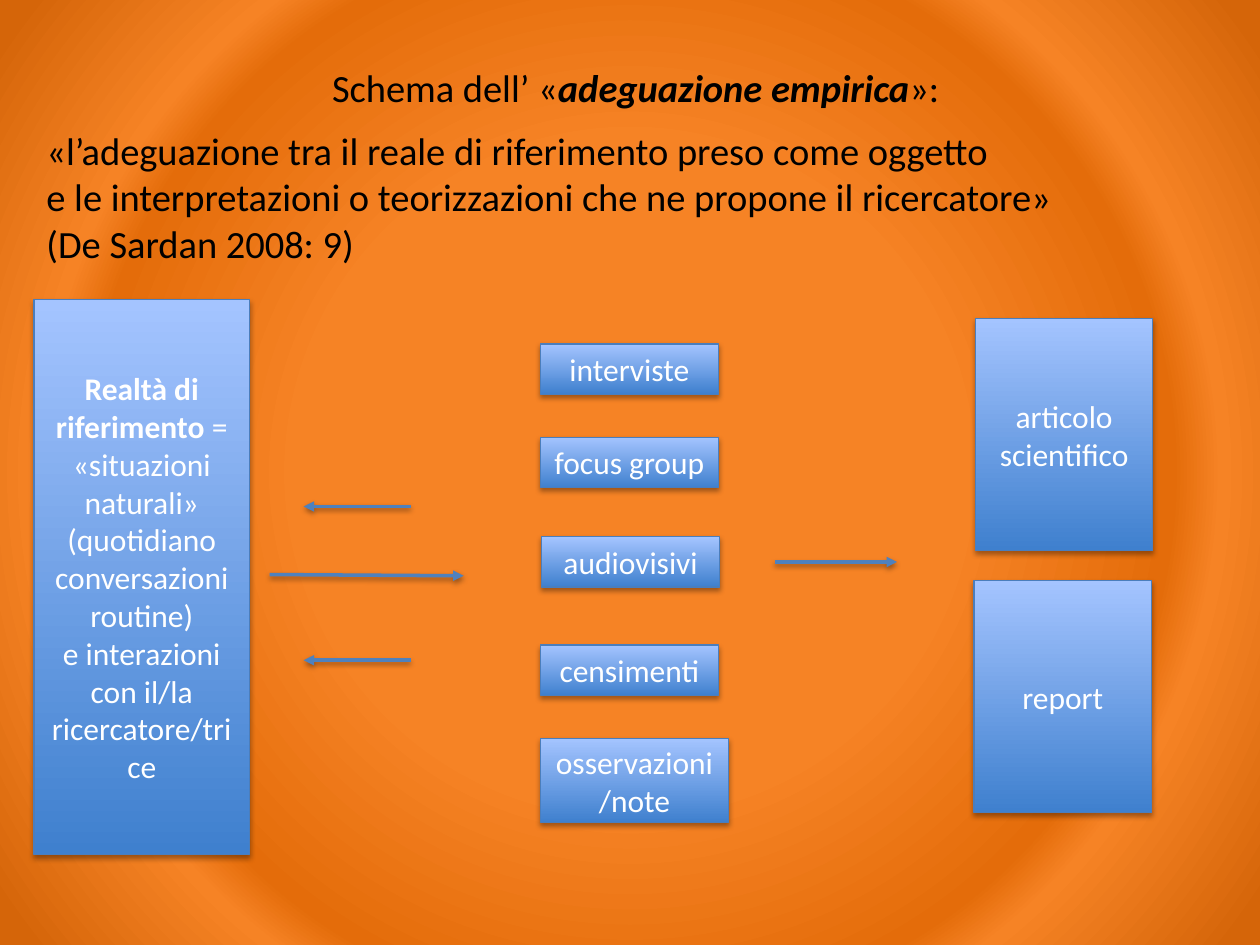
"""Build the slide on the scheme of empirical adequacy."""
from lxml.etree import SubElement as Sub
from pptx import Presentation
from pptx.dml.color import RGBColor
from pptx.enum.shapes import MSO_CONNECTOR as Conn, MSO_SHAPE as Shape
from pptx.enum.text import MSO_ANCHOR as Anchor, PP_ALIGN as Align
from pptx.oxml.ns import qn
from pptx.util import Inches, Pt

BLACK = RGBColor(0x00, 0x00, 0x00)
WHITE = RGBColor(0xFF, 0xFF, 0xFF)
DEEP = RGBColor(0x3F, 0x80, 0xCE)
PALE = RGBColor(0xA4, 0xC4, 0xFF)
EDGE = RGBColor(0x4B, 0x7E, 0xBC)
BLUE = RGBColor(0x4F, 0x81, 0xBD)
GLOW = RGBColor(0xF6, 0x83, 0x25)
RING = RGBColor(0xE4, 0x6C, 0x0A)
RIM = RGBColor(0xD5, 0x65, 0x09)


def shade(item, dist, alpha):
    props = item._element.spPr
    for old in props.findall(qn("a:effectLst")):
        props.remove(old)
    glow = Sub(Sub(props, qn("a:effectLst")), qn("a:outerShdw"),
               blurRad=str(Pt(3.1)), dist=str(Pt(dist)), dir="5400000", rotWithShape="0")
    tone = Sub(glow, qn("a:srgbClr"), val=str(BLACK))
    Sub(tone, qn("a:alpha"), val=str(alpha * 1000))


def write(frame, lines, size, color, align):
    frame.word_wrap = True
    for i, line in enumerate(lines):
        para = frame.paragraphs[0] if i == 0 else frame.add_paragraph()
        para.alignment = align
        for text, bold, slant in line:
            run = para.add_run()
            run.text = text
            font = run.font
            font.name, font.size, font.bold, font.italic = "Calibri", Pt(size), bold, slant
            font.color.rgb = color


deck = Presentation()
deck.slide_width, deck.slide_height = Inches(10), Inches(7.5)
slide = deck.slides.add_slide(deck.slide_layouts[6])

slide.background.fill.gradient()
grad = next(slide.element.iter(qn("a:gradFill")))
for child in list(grad):
    grad.remove(child)
stops = Sub(grad, qn("a:gsLst"))
for place, color in [(42, GLOW), (69, RING), (75, GLOW), (97, RIM)]:
    stop = Sub(stops, qn("a:gs"), pos=str(place * 1000))
    Sub(stop, qn("a:srgbClr"), val=str(color))
Sub(Sub(grad, qn("a:path"), path="circle"), qn("a:fillToRect"),
    l="50000", t="50000", r="50000", b="50000")

real = [
    [("Realtà di riferimento ", True, False), ("=", False, False)],
    [("«situazioni naturali» (quotidiano conversazioni", False, False)],
    [("routine)", False, False)],
    [("e interazioni con il/la ricercatore/trice", False, False)],
]
boxes = [(0.27, 2.38, 1.71, 4.4, real)]
for x, y, w, h, text in [
    (7.73, 4.61, 1.41, 1.84, "report"),
    (7.74, 2.53, 1.41, 1.84, "articolo scientifico"),
    (4.29, 2.73, 1.41, 0.4, "interviste"),
    (4.29, 3.47, 1.41, 0.4, "focus group "),
    (4.3, 4.26, 1.41, 0.4, "audiovisivi"),
    (4.29, 5.12, 1.41, 0.4, "censimenti"),
    (4.29, 5.86, 1.49, 0.67, "osservazioni/note"),
]:
    boxes.append((x, y, w, h, [[(text, False, False)]]))

for x, y, w, h, lines in boxes:
    box = slide.shapes.add_shape(Shape.RECTANGLE, Inches(x), Inches(y), Inches(w), Inches(h))
    box.fill.gradient()
    box.fill.gradient_angle = 90
    for stop, color in zip(box.fill.gradient_stops, (DEEP, PALE)):
        stop.color.rgb = color
    box.line.color.rgb = EDGE
    box.line.width = Pt(0.75)
    shade(box, 1.8, 35)
    box.text_frame.vertical_anchor = Anchor.MIDDLE
    write(box.text_frame, lines, 18, WHITE, Align.CENTER)

for x1, y1, x2, y2 in [
    (6.15, 4.46, 7.12, 4.46),
    (2.14, 4.56, 3.68, 4.57),
    (3.26, 4.02, 2.41, 4.02),
    (3.26, 5.24, 2.41, 5.24),
]:
    arrow = slide.shapes.add_connector(
        Conn.STRAIGHT, Inches(x1), Inches(y1), Inches(x2), Inches(y2))
    arrow.line.color.rgb = BLUE
    arrow.line.width = Pt(2)
    Sub(arrow.line._get_or_add_ln(), qn("a:tailEnd"), type="triangle")
    shade(arrow, 1.6, 38)

title = [[("Schema dell’ «", False, False), ("adeguazione empirica", True, True),
          ("»: ", False, False)]]
quote = [[(text, False, False)] for text in (
    "«l’adeguazione tra il reale di riferimento preso come oggetto",
    "e le interpretazioni o teorizzazioni che ne propone il ricercatore»",
    "(De Sardan 2008: 9)",
)]
for x, y, w, h, lines, align in [
    (1.58, 0.46, 7, 1.92, title, Align.CENTER),
    (0.27, 0.96, 11.18, 1.88, quote, Align.LEFT),
]:
    area = slide.shapes.add_textbox(Inches(x), Inches(y), Inches(w), Inches(h))
    write(area.text_frame, lines, 22, BLACK, align)

deck.save("out.pptx")
